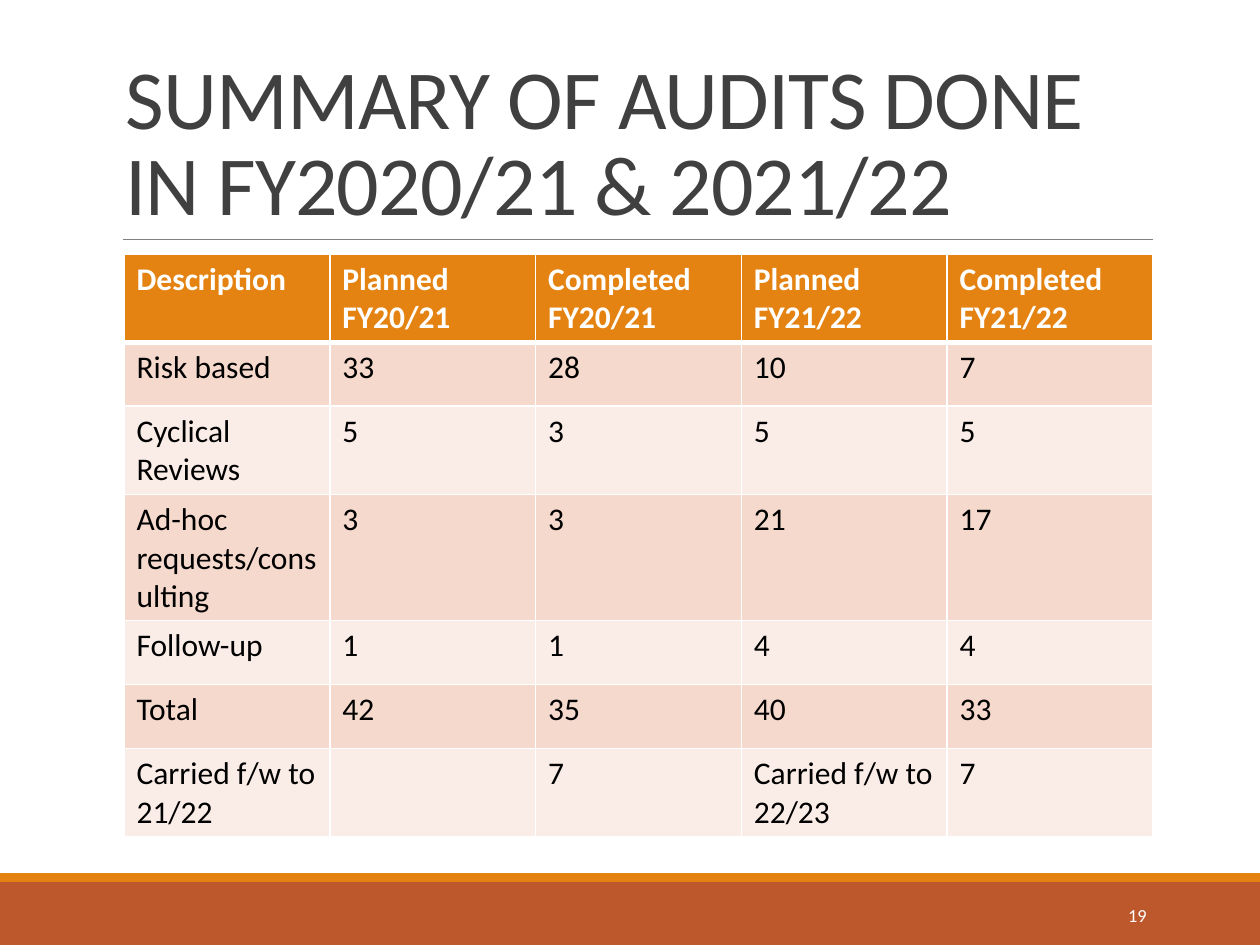
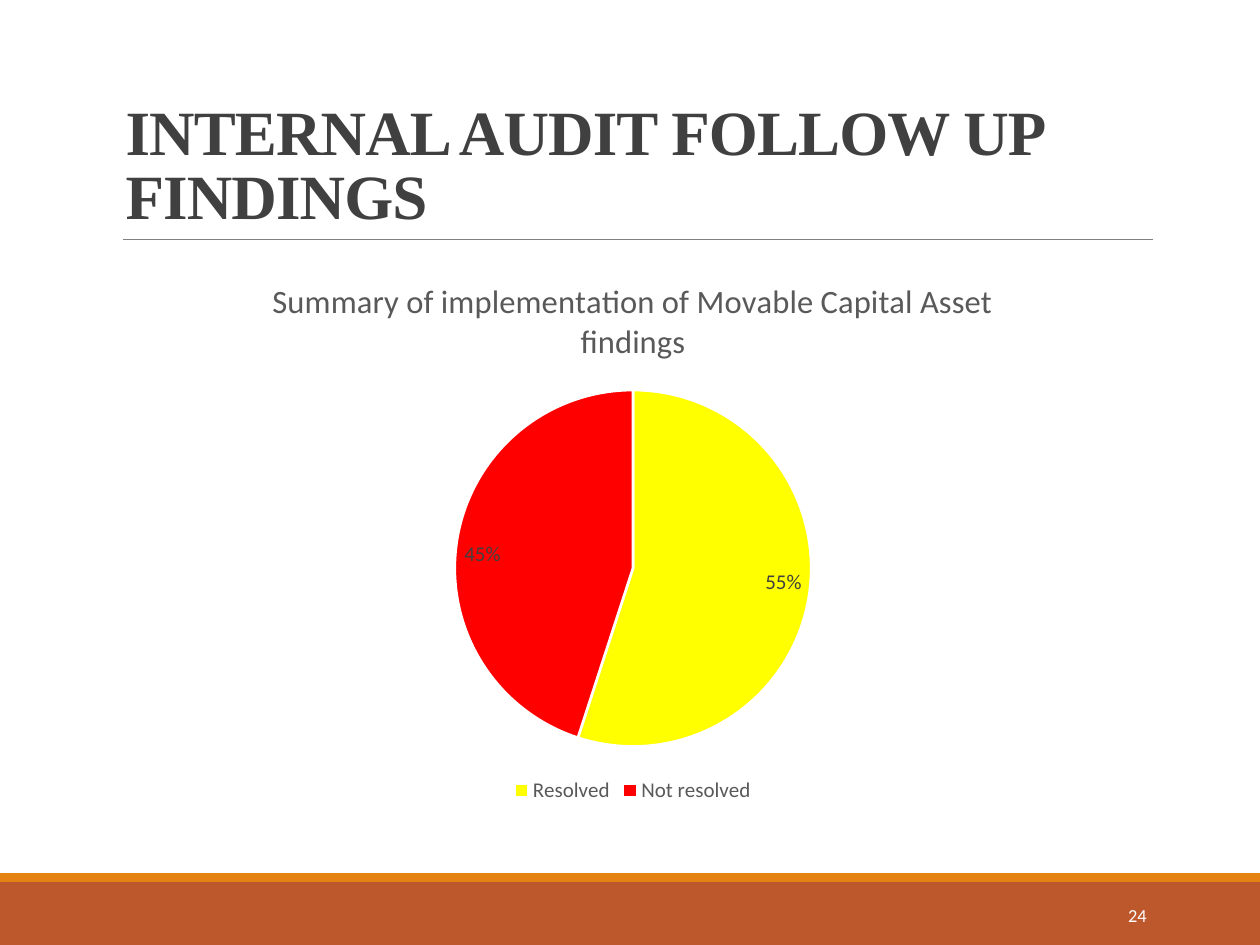
from lxml import etree
from pptx import Presentation
from pptx.chart.data import CategoryChartData
from pptx.dml.color import RGBColor
from pptx.enum.chart import XL_CHART_TYPE, XL_LABEL_POSITION, XL_LEGEND_POSITION
from pptx.enum.shapes import MSO_CONNECTOR, MSO_SHAPE
from pptx.enum.text import MSO_ANCHOR, MSO_AUTO_SIZE, PP_ALIGN
from pptx.oxml.ns import qn
from pptx.util import Emu, Pt

EMU_PER_PX = 914400 / 126
PAGE_WIDTH, PAGE_HEIGHT = 1260, 945

WHITE = RGBColor(0xFF, 0xFF, 0xFF)
BLACK = RGBColor(0x00, 0x00, 0x00)
RUST = RGBColor(0xBD, 0x58, 0x2C)
ORANGE = RGBColor(0xE4, 0x83, 0x12)
RULE_GREY = RGBColor(0x80, 0x80, 0x80)
TITLE_GREY = RGBColor(0x40, 0x40, 0x40)
CHART_GREY = RGBColor(0x59, 0x59, 0x59)
ROW_DARK = RGBColor(0xF5, 0xD9, 0xCC)
ROW_LIGHT = RGBColor(0xFA, 0xED, 0xE7)
YELLOW = RGBColor(0xFF, 0xFF, 0x00)
RED = RGBColor(0xFF, 0x00, 0x00)

TITLE_BOX = (113, 39, 1040, 200)
TABLE_BOX = (124, 254, 1029, 448)
CHART_BOX = (113, 254, 1040, 554)
FOOTER_BOX = (0, 873, PAGE_WIDTH, 72)

AUDITS = [
    ("Description", "Planned FY20/21", "Completed FY20/21", "Planned FY21/22", "Completed FY21/22"),
    ("Risk based", "33", "28", "10", "7"),
    ("Cyclical Reviews", "5", "3", "5", "5"),
    ("Ad-hoc requests/consulting", "3", "3", "21", "17"),
    ("Follow-up", "1", "1", "4", "4"),
    ("Total", "42", "35", "40", "33"),
    ("Carried f/w to 21/22", "", "7", "Carried f/w to 22/23", "7"),
]
FINDINGS = [("Resolved", 0.55, YELLOW), ("Not resolved", 0.45, RED)]


def px(*lengths):
    return [Emu(round(length * EMU_PER_PX)) for length in lengths]


def format_font(font, size, color, name="Calibri", bold=False):
    values = {"size": Pt(size), "name": name, "bold": bold}
    for attribute, value in values.items():
        setattr(font, attribute, value)
    font.color.rgb = color


def format_frame(frame, **values):
    for attribute, value in values.items():
        setattr(frame, attribute, value)


def add_title(page, box, text, **style):
    title = page.shapes.title
    title.left, title.top, title.width, title.height = px(*box)
    format_frame(title.text_frame, word_wrap=True, auto_size=MSO_AUTO_SIZE.NONE,
                 vertical_anchor=MSO_ANCHOR.BOTTOM)
    para = title.text_frame.paragraphs[0]
    para.alignment = PP_ALIGN.LEFT
    para.line_spacing = 0.85
    span = para.add_run()
    span.text = text
    format_font(span.font, color=TITLE_GREY, **style)
    span._r.get_or_add_rPr().set("spc", "-50")


def add_title_rule(page, box):
    left, top, width, height = box
    bottom = top + height
    rule = page.shapes.add_connector(
        MSO_CONNECTOR.STRAIGHT, *px(left + 10, bottom, left + width, bottom))
    rule.line.color.rgb = RULE_GREY
    rule.line.width = Pt(0.5)
    etree.SubElement(rule._element.spPr, qn("a:effectLst"))


def add_footer(page, box, number):
    left, top, width, height = box
    stripe = 9
    bands = [(top + stripe, height - stripe, RUST), (top, stripe, ORANGE)]
    for band_top, band_height, color in bands:
        band = page.shapes.add_shape(
            MSO_SHAPE.RECTANGLE, *px(left, band_top, width, band_height))
        band.shadow.inherit = False
        band.fill.solid()
        band.fill.fore_color.rgb = color
        band.line.fill.background()
    label = page.shapes.add_textbox(*px(left + 1023, top + 17, 136, 50))
    format_frame(label.text_frame, word_wrap=True, vertical_anchor=MSO_ANCHOR.MIDDLE)
    para = label.text_frame.paragraphs[0]
    para.alignment = PP_ALIGN.RIGHT
    span = para.add_run()
    span.text = str(number)
    format_font(span.font, 10.5, WHITE)


def add_borders(cell, **widths):
    properties = cell._tc.get_or_add_tcPr()
    for index, side in enumerate("LRTB"):
        line = etree.Element(qn(f"a:ln{side}"), w=str(Pt(widths.get(side, 1))))
        fill = etree.SubElement(line, qn("a:solidFill"))
        etree.SubElement(fill, qn("a:srgbClr"), val=str(WHITE))
        properties.insert(index, line)


def add_audit_table(page, box, rows):
    table = page.shapes.add_table(len(rows), len(rows[0]), *px(*box)).table
    for row_index, row in enumerate(rows):
        is_header = row_index == 0
        fill = ORANGE if is_header else ROW_DARK if row_index % 2 else ROW_LIGHT
        for column_index, text in enumerate(row):
            cell = table.cell(row_index, column_index)
            cell.text = text
            cell.fill.solid()
            cell.fill.fore_color.rgb = fill
            format_font(cell.text_frame.paragraphs[0].font, 18,
                        WHITE if is_header else BLACK, bold=is_header)
            add_borders(cell, B=3 if is_header else 1, T=3 if row_index == 1 else 1)


def add_findings_chart(page, box, title, findings):
    data = CategoryChartData(number_format="0%")
    data.categories = [name for name, share, color in findings]
    data.add_series("Series 1", [share for name, share, color in findings])
    chart = page.shapes.add_chart(XL_CHART_TYPE.PIE, *px(*box), data).chart
    format_font(chart.font, 10, BLACK)

    chart.has_title = True
    span = chart.chart_title.text_frame.paragraphs[0].add_run()
    span.text = title
    format_font(span.font, 18.6, CHART_GREY)
    chart.chart_title.include_in_layout = False

    chart.has_legend = True
    chart.legend.position = XL_LEGEND_POSITION.BOTTOM
    chart.legend.include_in_layout = False
    format_font(chart.legend.font, 12, CHART_GREY)

    plot = chart.plots[0]
    plot.vary_by_categories = True
    plot.has_data_labels = True
    values = {"show_value": True, "show_percentage": False, "number_format": "0%",
              "number_format_is_linked": False, "position": XL_LABEL_POSITION.INSIDE_END}
    for attribute, value in values.items():
        setattr(plot.data_labels, attribute, value)
    format_font(plot.data_labels.font, 12, TITLE_GREY)

    for index, (name, share, color) in enumerate(findings):
        wedge = plot.series[0].points[index].format
        wedge.fill.solid()
        wedge.fill.fore_color.rgb = color
        wedge.line.color.rgb = WHITE
        wedge.line.width = Pt(1.5)


def add_page(deck, title, number, **title_style):
    page = deck.slides.add_slide(deck.slide_layouts[5])
    add_footer(page, FOOTER_BOX, number)
    add_title_rule(page, TITLE_BOX)
    add_title(page, TITLE_BOX, title, **title_style)
    return page


def main():
    deck = Presentation()
    deck.slide_width, deck.slide_height = px(PAGE_WIDTH, PAGE_HEIGHT)
    audits = add_page(deck, "SUMMARY OF AUDITS DONE IN FY2020/21 & 2021/22", 19, size=48)
    add_audit_table(audits, TABLE_BOX, AUDITS)
    follow_up = add_page(deck, "INTERNAL AUDIT FOLLOW UP FINDINGS", 24,
                         size=36, name="Times New Roman", bold=True)
    add_findings_chart(follow_up, CHART_BOX,
                       "Summary of implementation of Movable Capital Asset findings", FINDINGS)
    deck.save("out.pptx")


if __name__ == "__main__":
    main()
